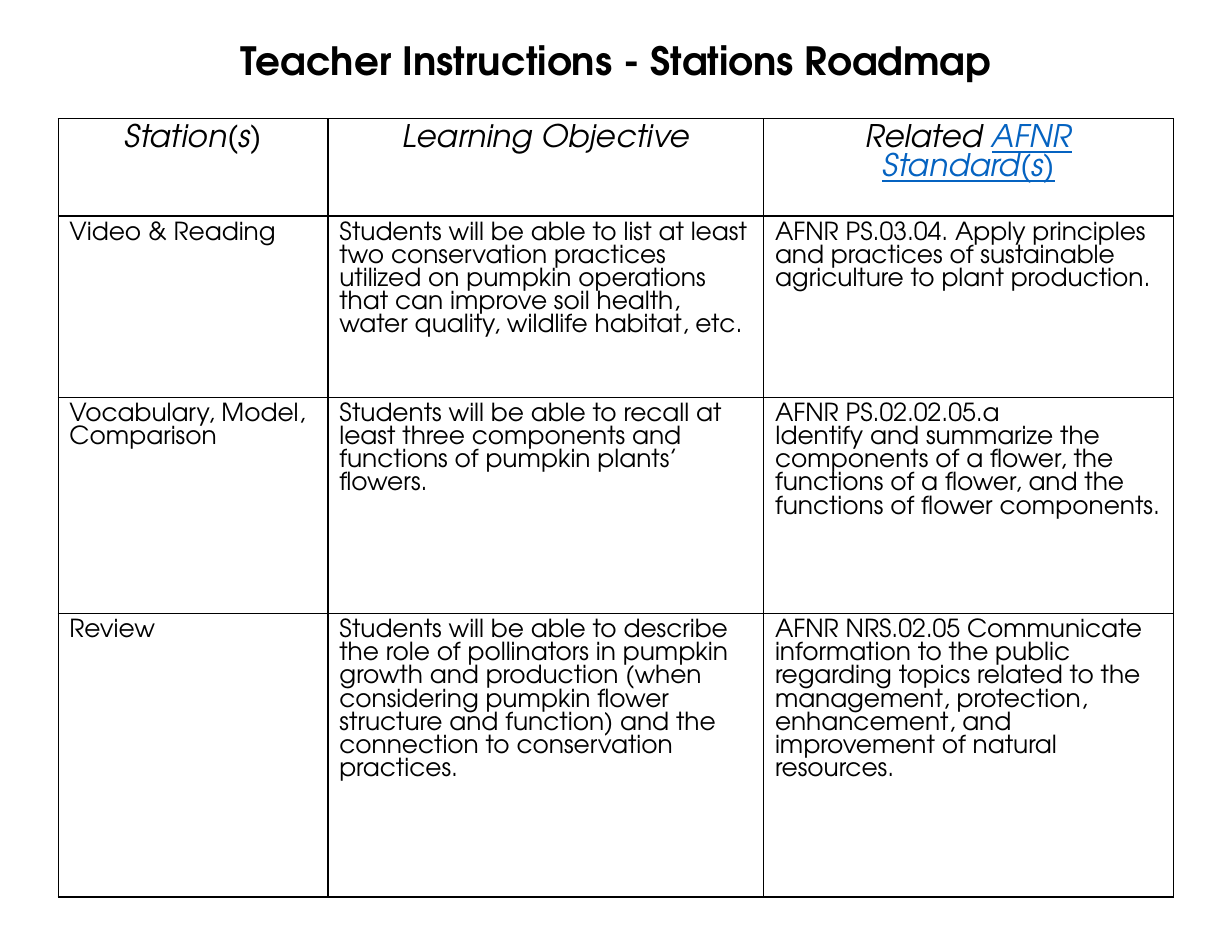
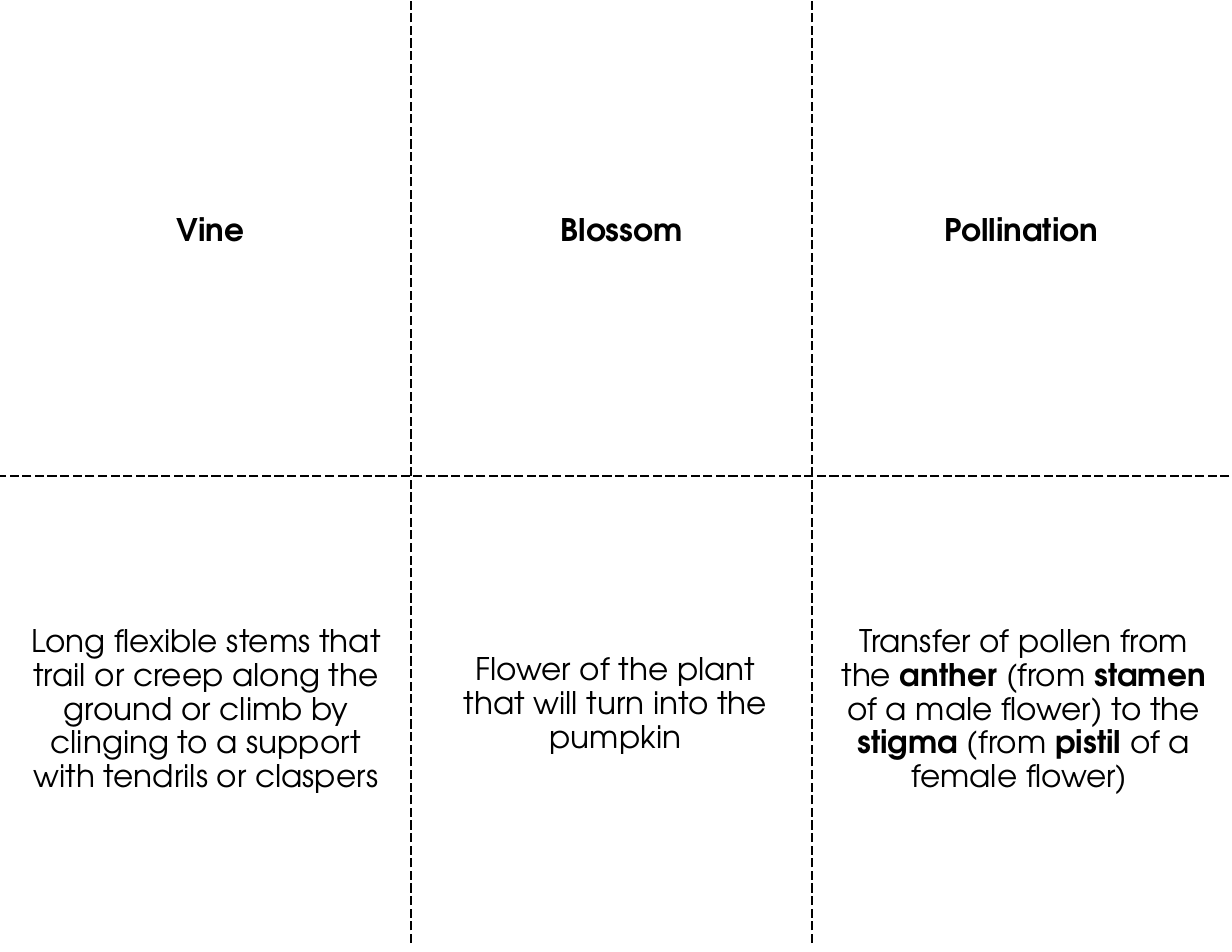
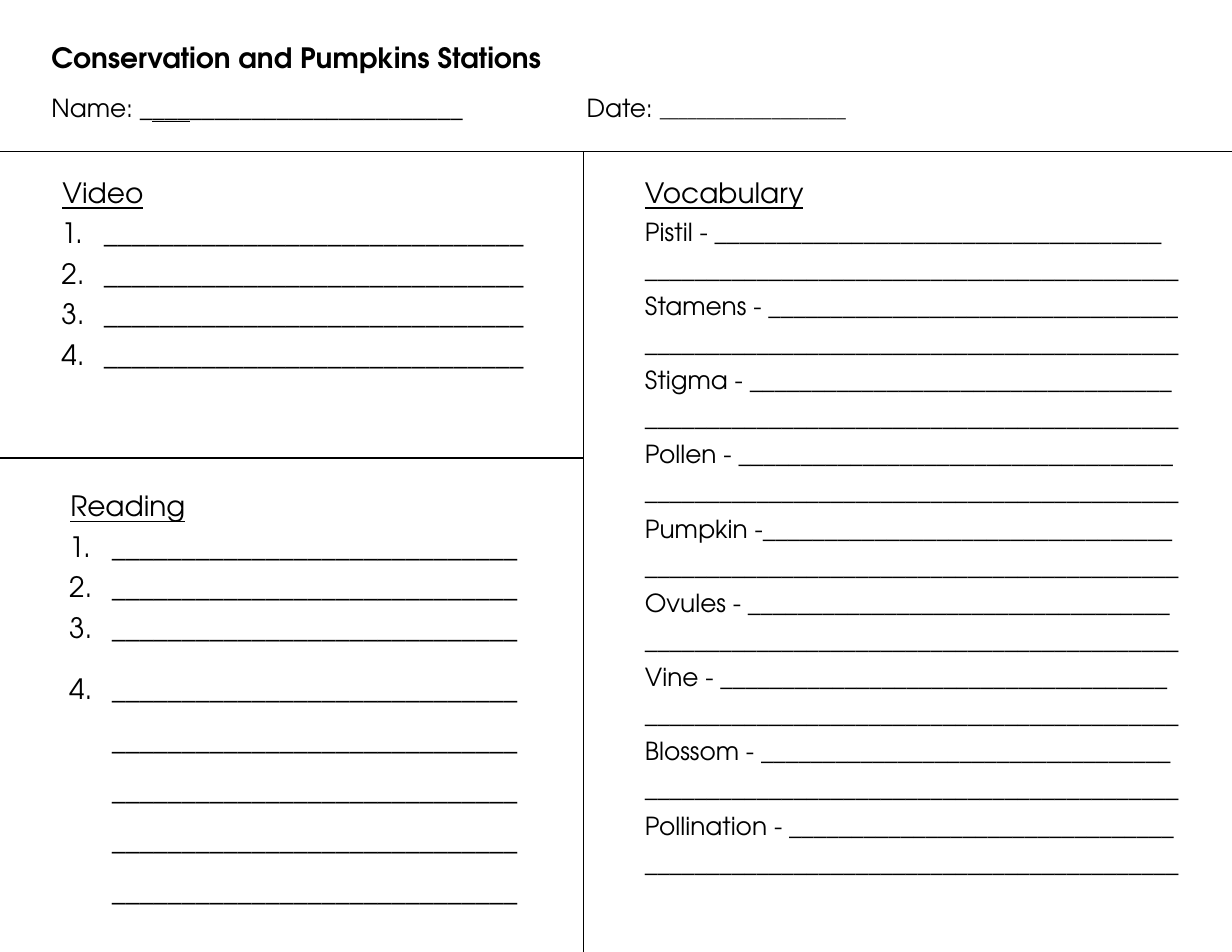
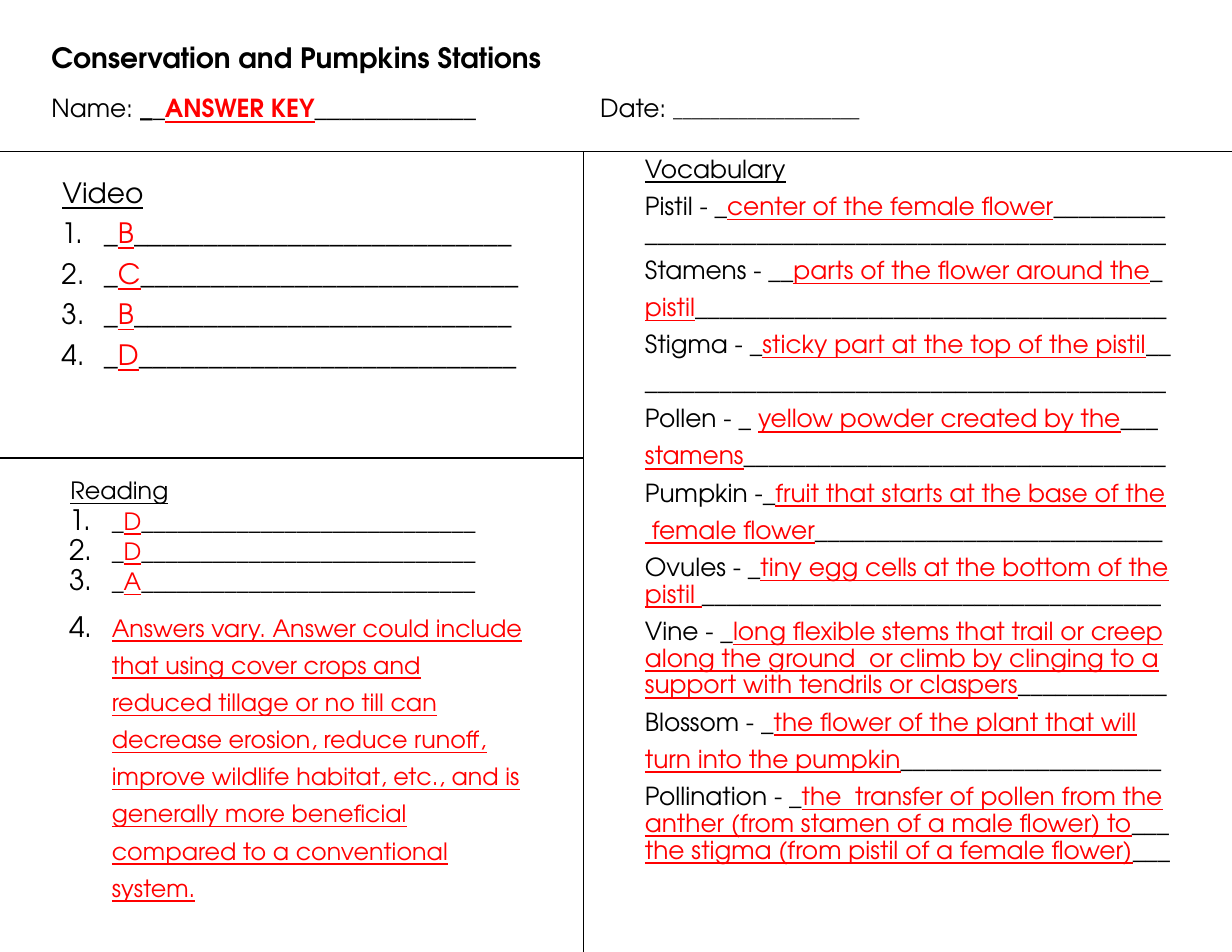
from lxml.etree import SubElement
from pptx import Presentation
from pptx.dml.color import RGBColor
from pptx.enum.dml import MSO_LINE
from pptx.enum.shapes import MSO_CONNECTOR
from pptx.enum.text import MSO_ANCHOR, MSO_AUTO_SIZE, PP_ALIGN
from pptx.oxml.ns import qn
from pptx.util import Inches, Pt

FONT = "TeX Gyre Adventor"
BLACK = RGBColor(0x00, 0x00, 0x00)
RED = RGBColor(0xFF, 0x00, 0x00)
LINK_BLUE = RGBColor(0x05, 0x63, 0xC1)

BOLD = {"bold": True}
UNDERLINED = {"underline": True}
ANSWER = {"underline": True, "color": RED}
LINK = {"underline": True, "color": LINK_BLUE}
CENTER = {"alignment": PP_ALIGN.CENTER}
BODY = {"line_spacing": 0.9, "space_before": Pt(6.6)}


def blank(count):
    return "_" * count


# Content: text between two bars takes the marked format of its block.
ROADMAP_TITLE = "Teacher Instructions - Stations Roadmap"
ROADMAP_BOX = (0.52, 1.06)
ROADMAP_COLUMNS = (2.41, 3.89, 3.66)
ROADMAP_ROWS = (0.87, 1.62, 1.93, 2.53)
ROADMAP = [
    ("Station(s)", "Learning Objective", "Related |AFNR Standard(s)|"),
    ("Video & Reading",
     "Students will be able to list at least two conservation practices utilized on "
     "pumpkin operations that can improve soil health, water quality, wildlife "
     "habitat, etc.",
     "AFNR PS.03.04. Apply principles and practices of sustainable agriculture to "
     "plant production."),
    ("Vocabulary, Model, Comparison",
     "Students will be able to recall at least three components and functions of "
     "pumpkin plants’ flowers.",
     "AFNR PS.02.02.05.a\nIdentify and summarize the components of a flower, the "
     "functions of a flower, and the functions of flower components."),
    ("Review",
     "Students will be able to describe the role of pollinators in pumpkin growth and "
     "production (when considering pumpkin flower structure and function) and the "
     "connection to conservation practices.",
     "AFNR NRS.02.05 Communicate information to the public regarding topics related to "
     "the management, protection, enhancement, and improvement of natural resources."),
]

CARDS = [
    ((0, 1.87, 3.66, 0.74), "|Vine|"),
    ((3.67, 1.87, 3.66, 0.74), "|Blossom|"),
    ((7.24, 1.87, 3.66, 0.74), "|Pollination|"),
    ((-0.04, 5.54, 3.66, 1.88),
     "Long flexible stems that trail or creep along the ground or climb by clinging to "
     "a support with tendrils or claspers"),
    ((3.75, 5.79, 3.39, 1.11), "Flower of the plant that will turn into the pumpkin"),
    ((7.26, 5.54, 3.66, 2.45),
     "Transfer of pollen from the |anther| (from |stamen| of a male flower) to the "
     "|stigma| (from |pistil| of a female flower) "),
]
CUT_LINES = [
    (3.67, 8.42, 3.67, 0),
    (7.25, 8.42, 7.25, 0),
    (11.09, 4.25, -0.09, 4.25),
]

WORKSHEET_TITLE = "Conservation and Pumpkins Stations"
WORKSHEET_LINES = [
    (5.21, 8.5, 5.21, 1.35),
    (5.21, 4.09, -0.09, 4.09),
    (11, 1.35, 0, 1.35),
]
VIDEO_BOX = (0.36, 1.55, 4.44, 2.45)

TERM_BLANKS = [
    ("Pistil - ", 36), ("Stamens - ", 33), ("Stigma - ", 34),
    ("Pollen - ", 35), ("Pumpkin -", 33), ("Ovules - ", 34),
    ("Vine - ", 36), ("Blossom - ", 33), ("Pollination - ", 31),
]
STUDENT_SHEET = {
    "header_width": 7.39,
    "date_tab": 4.78,
    "name": [("Name: _", {}), (blank(3), UNDERLINED), (blank(22), {})],
    "video": [blank(30)] * 4,
    "reading_box": (0.43, 4.35, 4.37, 3.95),
    "reading_size": 18,
    "reading_spacing": (0.9, 1.5),
    "reading": [blank(29)] * 3 + [blank(5 * 29)],
    "vocabulary_box": (5.56, 1.55, 5.08, 6.64),
    "vocabulary_size": 18,
    "vocabulary": [line for term, count in TERM_BLANKS
                   for line in (term + blank(count), blank(43))],
}
ANSWER_KEY = {
    "header_width": 7.88,
    "date_tab": 4.9,
    "name": [("Name: ", {}), ("_", BOLD), ("_", {}),
             ("ANSWER KEY", {**ANSWER, **BOLD}), (blank(13), {})],
    "video": [f"_|{letter}|{blank(27)}" for letter in "BCBD"],
    "reading_box": (0.43, 4.27, 4.37, 3.95),
    "reading_size": 15.3,
    "reading_spacing": (0.7, 1.3),
    "reading": [f"_|{letter}|{blank(28)}" for letter in "DDA"] + [
        "|Answers vary. Answer could include that using cover crops and reduced tillage "
        "or no till can decrease erosion, reduce runoff, improve wildlife habitat, etc., "
        "and is generally more beneficial compared to a conventional system.|"],
    "vocabulary_box": (5.56, 1.35, 5.08, 7.36),
    "vocabulary_size": 16,
    "vocabulary": [
        f"Pistil - _|center of the female flower|{blank(9)} {blank(42)}",
        "Stamens - __|parts of the flower around the|_",
        f"|pistil|{blank(38)}",
        "Stigma - _|sticky part at the top of the pistil|__",
        blank(42),
        "Pollen - _ |yellow powder created by the|___",
        f"|stamens|{blank(34)}",
        "Pumpkin -_|fruit that starts at the base of the|",
        f"| female flower|{blank(28)}",
        f"Ovules - _|tiny egg cells at the bottom of the pistil |{blank(37)}",
        "Vine - _|long flexible stems that trail or creep along the ground  or climb by "
        f"clinging to a support with tendrils or claspers|{blank(12)}",
        "Blossom - _|the flower of the plant that will|",
        f"|turn into the pumpkin|{blank(21)}",
        "Pollination - _|the  transfer of pollen from the anther (from stamen of a male "
        "flower) to|___| the stigma (from pistil of a female flower)|___",
    ],
}


def marked_runs(text, marked):
    """Split text at the bars; every second piece takes the marked format."""
    return [(piece, marked if index % 2 else {})
            for index, piece in enumerate(text.split("|")) if piece]


def add_runs(paragraph, runs, size, **shared):
    for text, changes in runs:
        run = paragraph.add_run()
        run.text = text
        font = {"name": FONT, "size": Pt(size), "color": BLACK, **shared, **changes}
        run.font.color.rgb = font.pop("color")
        for name, value in font.items():
            setattr(run.font, name, value)


def next_paragraph(frame, layout, left=0.0, first=0.0):
    """Return the empty first paragraph or a new one, with layout and indents set."""
    used = frame.paragraphs[0].runs
    paragraph = frame.add_paragraph() if used else frame.paragraphs[0]
    for name, value in layout.items():
        setattr(paragraph, name, value)
    if left:
        properties = paragraph._p.get_or_add_pPr()
        properties.set("marL", str(Inches(left)))
        properties.set("indent", str(Inches(first)))
    return paragraph


def number_paragraph(paragraph, percent):
    properties = paragraph._p.get_or_add_pPr()
    color = SubElement(properties, qn("a:buClr"))
    SubElement(color, qn("a:srgbClr"), val=str(BLACK))
    SubElement(properties, qn("a:buSzPct"), val=str(percent * 1000))
    SubElement(properties, qn("a:buAutoNum"), type="arabicPeriod")


def add_tab_stop(paragraph, position):
    tabs = SubElement(paragraph._p.get_or_add_pPr(), qn("a:tabLst"))
    SubElement(tabs, qn("a:tab"), pos=str(Inches(position)), algn="l")


def add_frame(slide, box):
    frame = slide.shapes.add_textbox(*map(Inches, box)).text_frame
    frame.word_wrap = True
    return frame


def add_lines(slide, lines, dash=None):
    for ends in lines:
        line = slide.shapes.add_connector(MSO_CONNECTOR.STRAIGHT, *map(Inches, ends))
        line.line.color.rgb = BLACK
        line.line.width = Pt(0.75)
        if dash:
            line.line.dash_style = dash
        SubElement(line._element.spPr, qn("a:effectLst"))


def outline_cell(cell):
    properties = cell._tc.get_or_add_tcPr()
    for side in ("lnL", "lnR", "lnT", "lnB"):
        border = SubElement(properties, qn(f"a:{side}"), w=str(Pt(1)))
        fill = SubElement(border, qn("a:solidFill"))
        SubElement(fill, qn("a:srgbClr"), val=str(BLACK))
    cell.fill.background()


def build_roadmap(slide):
    frame = add_frame(slide, (0, 0.2, 11, 0.72))
    frame.vertical_anchor = MSO_ANCHOR.MIDDLE
    title = next_paragraph(frame, {**CENTER, "line_spacing": 0.9})
    add_runs(title, [(ROADMAP_TITLE, BOLD)], 25)

    box = (*ROADMAP_BOX, sum(ROADMAP_COLUMNS), sum(ROADMAP_ROWS))
    table = slide.shapes.add_table(len(ROADMAP_ROWS), len(ROADMAP_COLUMNS),
                                   *map(Inches, box)).table
    table.first_row = table.horz_banding = False
    for column, width in zip(table.columns, ROADMAP_COLUMNS):
        column.width = Inches(width)
    for row_index, (height, texts) in enumerate(zip(ROADMAP_ROWS, ROADMAP)):
        table.rows[row_index].height = Inches(height)
        header = row_index == 0
        for column_index, text in enumerate(texts):
            cell = table.cell(row_index, column_index)
            outline_cell(cell)
            for line in text.split("\n"):
                paragraph = next_paragraph(cell.text_frame, CENTER if header else {})
                add_runs(paragraph, marked_runs(line, LINK), 20 if header else 16,
                         italic=header)


def build_cards(slide):
    add_lines(slide, CUT_LINES, MSO_LINE.LONG_DASH)
    for box, text in CARDS:
        paragraph = next_paragraph(add_frame(slide, box), {**BODY, **CENTER}, 0.1)
        add_runs(paragraph, marked_runs(text, BOLD), 20)


def add_section(slide, box, heading, size, spacing=0.9):
    frame = add_frame(slide, box)
    paragraph = next_paragraph(frame, {**BODY, "line_spacing": spacing}, 0.1)
    add_runs(paragraph, [(heading, UNDERLINED)], size)
    return frame


def add_numbered(frame, items, size, spacings):
    for text, spacing in zip(items, spacings):
        paragraph = next_paragraph(frame, {**BODY, "line_spacing": spacing}, 0.47, -0.38)
        number_paragraph(paragraph, round(18 / size * 100))
        add_runs(paragraph, marked_runs(text, ANSWER), size)


def build_worksheet(slide, sheet):
    add_lines(slide, WORKSHEET_LINES)

    header = add_frame(slide, (0.36, 0.31, sheet["header_width"], 0.84))
    header.auto_size = MSO_AUTO_SIZE.SHAPE_TO_FIT_TEXT
    add_runs(next_paragraph(header, {}), [(WORKSHEET_TITLE, BOLD)], 18)
    name_line = next_paragraph(header, {"space_before": Pt(12)})
    add_tab_stop(name_line, sheet["date_tab"])
    date = [("\tDate: ", {}), (blank(20), {"size": Pt(12)})]
    add_runs(name_line, sheet["name"] + date, 16)

    video = add_section(slide, VIDEO_BOX, "Video", 18)
    add_numbered(video, sheet["video"], 18, [0.9] * 4)

    size = sheet["reading_size"]
    tight, loose = sheet["reading_spacing"]
    reading = add_section(slide, sheet["reading_box"], "Reading", size, tight)
    add_numbered(reading, sheet["reading"], size, [tight] * 3 + [loose])

    vocabulary = add_section(slide, sheet["vocabulary_box"], "Vocabulary",
                             sheet["vocabulary_size"])
    for text in sheet["vocabulary"]:
        add_runs(next_paragraph(vocabulary, BODY, 0.1), marked_runs(text, ANSWER), 16)


def main():
    presentation = Presentation()
    presentation.slide_width, presentation.slide_height = Inches(11), Inches(8.5)
    roadmap, cards, student, key = (
        presentation.slides.add_slide(presentation.slide_layouts[6]) for _ in range(4))
    build_roadmap(roadmap)
    build_cards(cards)
    build_worksheet(student, STUDENT_SHEET)
    build_worksheet(key, ANSWER_KEY)
    presentation.save("out.pptx")


if __name__ == "__main__":
    main()
